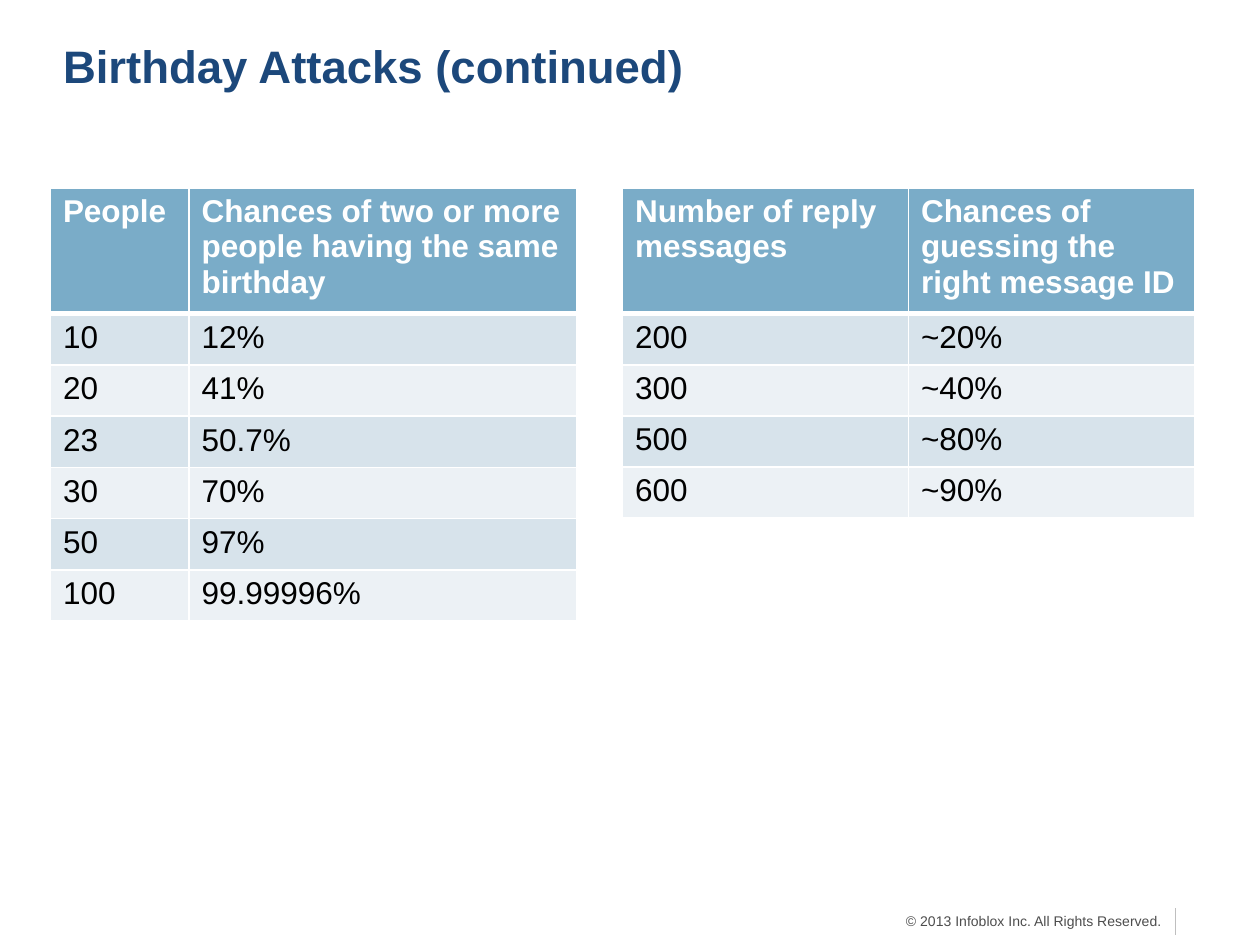
from lxml import etree
from pptx import Presentation
from pptx.dml.color import RGBColor
from pptx.enum.shapes import MSO_CONNECTOR
from pptx.enum.text import MSO_ANCHOR, PP_ALIGN
from pptx.oxml.ns import qn
from pptx.util import Inches, Pt

LEFT, RIGHT = PP_ALIGN.LEFT, PP_ALIGN.RIGHT
TOP, MIDDLE = MSO_ANCHOR.TOP, MSO_ANCHOR.MIDDLE
STRAIGHT = MSO_CONNECTOR.STRAIGHT

FONT = "Arial"
COLORS = {
    "title": "1C487B",
    "header": "7AACC8",
    "odd": "D7E3EB",
    "even": "ECF1F5",
    "white": "FFFFFF",
    "body": "000000",
    "footer": "4D4D4D",
    "rule": "BFBFBF",
}

TITLE = "Birthday Attacks (continued)"
FOOTER = "© 2013 Infoblox Inc. All Rights Reserved."
TABLES = [
    {
        "left": 0.4,
        "height": 3.44,
        "columns": [1.1, 3.08],
        "rows": [
            ("People", "Chances of two or more people having the same birthday"),
            ("10", "12%"),
            ("20", "41%"),
            ("23", "50.7%"),
            ("30", "70%"),
            ("50", "97%"),
            ("100", "99.99996%"),
        ],
    },
    {
        "left": 4.94,
        "height": 2.62,
        "columns": [2.27, 2.27],
        "rows": [
            ("Number of reply messages", "Chances of guessing the right message ID"),
            ("200", "~20%"),
            ("300", "~40%"),
            ("500", "~80%"),
            ("600", "~90%"),
        ],
    },
]
TABLE_TOP = 1.49
HEADER_HEIGHT = 1


def color(name):
    return RGBColor.from_string(COLORS[name])


def add_span(para, text, size, color_name, bold=False):
    span = para.add_run()
    span.text = text
    span.font.name = FONT
    span.font.size = Pt(size)
    span.font.bold = bold
    span.font.color.rgb = color(color_name)


def add_text(page, place, text, size, color_name, bold=False,
             align=LEFT, anchor=TOP, inset=None):
    box = page.shapes.add_textbox(*map(Inches, place))
    frame = box.text_frame
    frame.word_wrap = True
    frame.vertical_anchor = anchor
    if inset is not None:
        frame.margin_left = frame.margin_right = Inches(inset)
        frame.margin_top = frame.margin_bottom = Inches(inset)
    para = frame.paragraphs[0]
    para.alignment = align
    add_span(para, text, size, color_name, bold)


def set_borders(cell, widths):
    properties = cell._tc.get_or_add_tcPr()
    for index, (side, width) in enumerate(widths.items()):
        line = etree.Element(qn(f"a:ln{side}"), w=str(Pt(width)))
        fill = etree.SubElement(line, qn("a:solidFill"))
        etree.SubElement(fill, qn("a:srgbClr"), val=COLORS["white"])
        properties.insert(index, line)


def add_grid(page, left, height, columns, rows):
    row_height = (height - HEADER_HEIGHT) / (len(rows) - 1)
    table = page.shapes.add_table(
        len(rows), len(columns), Inches(left), Inches(TABLE_TOP),
        Inches(sum(columns)), Inches(height)).table
    for column, width in zip(table.columns, columns):
        column.width = Inches(width)
    for r, texts in enumerate(rows):
        is_header = r == 0
        table.rows[r].height = Inches(HEADER_HEIGHT if is_header else row_height)
        fill_name = "header" if is_header else "odd" if r % 2 else "even"
        widths = {"L": 1, "R": 1, "T": 3 if r == 1 else 1, "B": 3 if is_header else 1}
        for c, text in enumerate(texts):
            cell = table.cell(r, c)
            cell.fill.solid()
            cell.fill.fore_color.rgb = color(fill_name)
            set_borders(cell, widths)
            add_span(cell.text_frame.paragraphs[0], text, 18,
                     "white" if is_header else "body", is_header)


def add_footer(page):
    add_text(page, (4.72, 7.19, 4.6, 0.27), FOOTER, 8, "footer", align=RIGHT)
    rule = page.shapes.add_connector(
        STRAIGHT, Inches(9.33), Inches(7.21), Inches(9.33), Inches(7.42))
    rule.line.color.rgb = color("rule")
    rule.line.width = Pt(1)
    etree.SubElement(rule._element.spPr, qn("a:effectLst"))


def main():
    deck = Presentation()
    deck.slide_width, deck.slide_height = Inches(10), Inches(7.5)
    page = deck.slides.add_slide(deck.slide_layouts[6])
    add_footer(page)
    add_text(page, (0.5, 0.1, 9.25, 0.83), TITLE, 26, "title",
             bold=True, anchor=MIDDLE, inset=0)
    for grid in TABLES:
        add_grid(page, **grid)
    deck.save("out.pptx")


if __name__ == "__main__":
    main()
